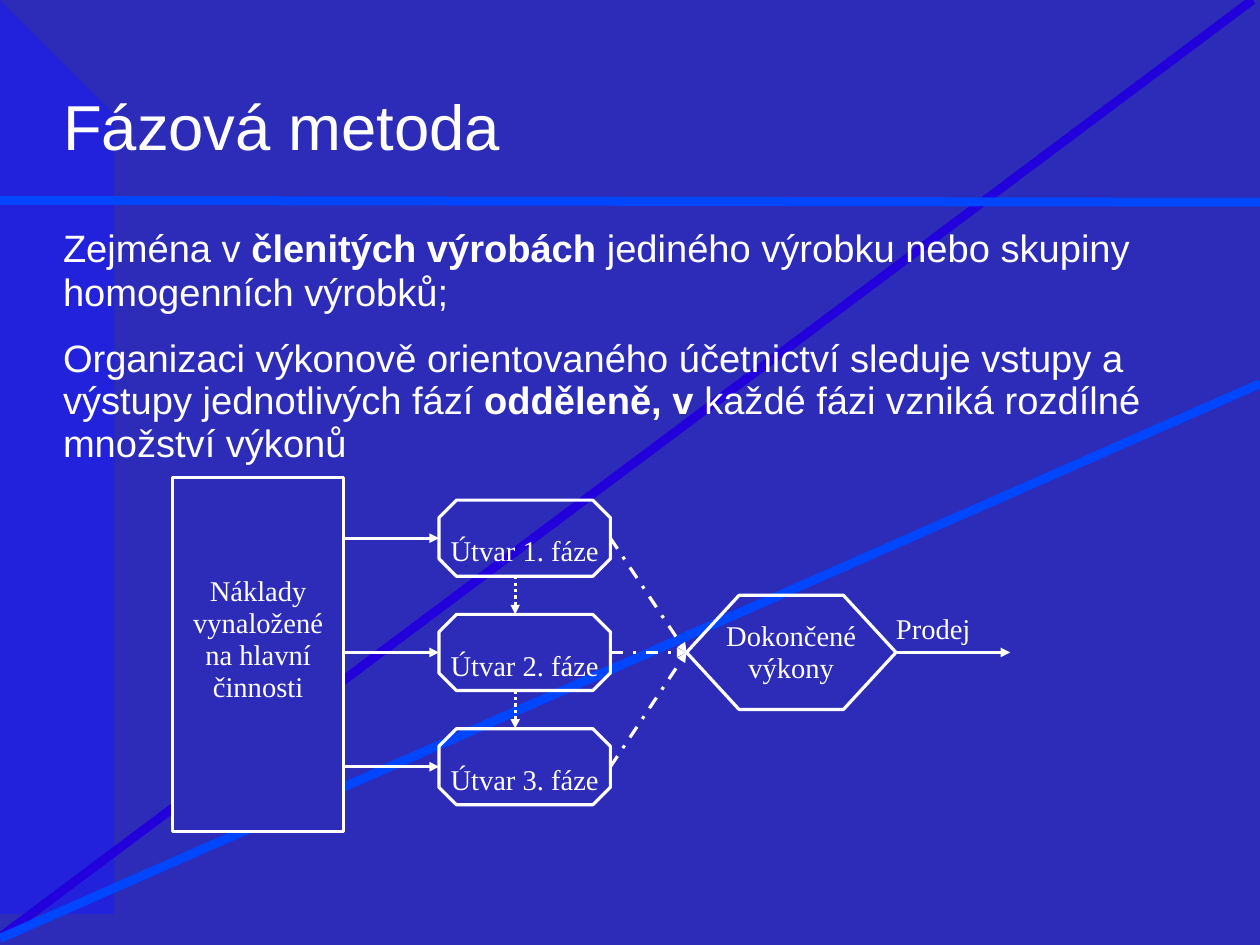
import math
from dataclasses import dataclass
from typing import Optional

import lxml.etree
import pptx
import pptx.dml.color
import pptx.enum.dml
import pptx.enum.shapes
import pptx.enum.text
import pptx.oxml.ns
import pptx.util

SHAPE = pptx.enum.shapes.MSO_SHAPE
DASH = pptx.enum.dml.MSO_LINE
ANCHOR = pptx.enum.text.MSO_ANCHOR
ALIGN = pptx.enum.text.PP_ALIGN
qn = pptx.oxml.ns.qn

SLIDE_W, SLIDE_H = 11.03, 8.27
CELL = 1 / 6
FLOW_LEFT, FLOW_TOP = 1.51, 4.21
WHITE, NAVY, BLUE, VIOLET, SKY = "FFFFFF", "2C2CB8", "2222DC", "2200DC", "0046FF"
SANS, SERIF = "Arial", "Times New Roman"


@dataclass
class Node:
    """A flow chart box; position and size are in grid cells."""
    text: str
    kind: pptx.enum.shapes.MSO_SHAPE
    col: float
    row: float
    cols: float
    rows: float
    corner: Optional[float] = None
    fill: Optional[str] = None
    anchor: pptx.enum.text.MSO_ANCHOR = ANCHOR.MIDDLE
    side_inset: float = 0
    bottom_inset: float = 0


@dataclass
class Arrow:
    """A flow chart arrow; both ends are in grid cells."""
    col1: float
    row1: float
    col2: float
    row2: float
    dash: Optional[pptx.enum.dml.MSO_LINE] = None


@dataclass
class Stripe:
    """A background line; both ends are shares of the slide's size."""
    x1: float
    y1: float
    x2: float
    y2: float
    color: str


PHASE_ROWS = (1, 7, 13)
NODES = [
    Node("Náklady vynaložené na hlavní činnosti", SHAPE.RECTANGLE, 0, -0.2, 9, 18.6,
         fill=NAVY, side_inset=0.16, bottom_inset=0.26),
    *(Node(f"Útvar {n}. fáze", SHAPE.OCTAGON, 14, row, 9, 4, corner=0.23,
           anchor=ANCHOR.BOTTOM) for n, row in enumerate(PHASE_ROWS, 1)),
    Node("Dokončené výkony", SHAPE.HEXAGON, 27, 6, 11, 6, corner=0.46),
]
ARROWS = [
    *(Arrow(9, row + 2, 14, row + 2) for row in PHASE_ROWS),
    *(Arrow(18, row + 4, 18, row + 6, DASH.ROUND_DOT) for row in PHASE_ROWS[:-1]),
    *(Arrow(23, row + 2, 27, 9, DASH.DASH_DOT) for row in PHASE_ROWS),
    Arrow(38, 9, 44, 9),
]
STRIPES = [
    Stripe(0.994, 0, 0, 0.992, VIOLET),
    Stripe(1, 0.214, 0, 0.212, SKY),
    Stripe(1, 0.406, 0, 0.993, SKY),
]
BODY = [
    (27.8, 0, [("Zejména v ", False), ("členitých výrobách ", True),
               ("jediného výrobku nebo skupiny", False)]),
    (27.8, 0, [("homogenních výrobků;", False)]),
    (26.8, 14.6, [("Organizaci výkonově orientovaného účetnictví sleduje vstupy a "
                   "výstupy jednotlivých fází ", False), ("odděleně, v ", True),
                  ("každé fázi vzniká rozdílné množství výkonů", False)]),
]


def rgb(color: str) -> pptx.dml.color.RGBColor:
    return pptx.dml.color.RGBColor.from_string(color)


def col_x(col: float) -> int:
    return pptx.util.Inches(FLOW_LEFT + col * CELL)


def row_y(row: float) -> int:
    return pptx.util.Inches(FLOW_TOP + row * CELL)


def span(cells: float) -> int:
    return pptx.util.Inches(cells * CELL)


def share_x(share: float) -> int:
    return pptx.util.Inches(SLIDE_W * share)


def share_y(share: float) -> int:
    return pptx.util.Inches(SLIDE_H * share)


def set_font(p, name: str, size: float) -> None:
    p.font.name, p.font.size = name, pptx.util.Pt(size)
    p.font.color.rgb = rgb(WHITE)


def set_frame(tf, anchor, side: float = 0, top: float = 0, bottom: float = 0) -> None:
    tf.word_wrap = True
    tf.auto_size = pptx.enum.text.MSO_AUTO_SIZE.NONE
    tf.vertical_anchor = anchor
    tf.margin_left = tf.margin_right = pptx.util.Inches(side)
    tf.margin_top, tf.margin_bottom = pptx.util.Inches(top), pptx.util.Inches(bottom)


def draw_line(slide, x1: int, y1: int, x2: int, y2: int, color: str, width: float):
    line = slide.shapes.add_connector(pptx.enum.shapes.MSO_CONNECTOR.STRAIGHT, x1, y1, x2, y2)
    line.line.color.rgb = rgb(color)
    line.line.width = pptx.util.Pt(width)
    lxml.etree.SubElement(line._element.spPr, qn("a:effectLst"))
    return line


def draw_backdrop(slide) -> None:
    slide.background.fill.solid()
    slide.background.fill.fore_color.rgb = rgb(NAVY)
    points = [(max(0, 0.11 + 0.86 * math.cos(math.radians(a))),
               4.14 + 4.12 * math.sin(math.radians(a))) for a in range(-98, 99, 4)]
    builder = slide.shapes.build_freeform(*points[0], scale=pptx.util.Inches(1))
    builder.add_line_segments(points[1:])
    sp = builder.convert_to_shape()
    sp.shadow.inherit = False
    sp.fill.solid()
    sp.fill.fore_color.rgb = rgb(BLUE)
    sp.line.fill.background()
    for s in STRIPES:
        draw_line(slide, share_x(s.x1), share_y(s.y1), share_x(s.x2), share_y(s.y2),
                  s.color, 5.67)


def place(slide, sp, top: float, height: float) -> None:
    """Bring a placeholder above the backdrop and set it on the text column."""
    slide.shapes._spTree.append(sp._element)
    sp.left, sp.width = share_x(0.05), share_x(0.902)
    sp.top, sp.height = share_y(top), share_y(height)


def write_title(slide) -> None:
    sp = slide.shapes.title
    place(slide, sp, 0.052, 0.122)
    set_frame(sp.text_frame, ANCHOR.TOP, top=0.33)
    p = sp.text_frame.paragraphs[0]
    p.text, p.alignment = "Fázová metoda", ALIGN.LEFT
    set_font(p, SANS, 40)


def write_body(slide) -> None:
    sp = slide.placeholders[1]
    place(slide, sp, 0.239, 0.258)
    tf = sp.text_frame
    set_frame(tf, ANCHOR.TOP)
    for i, (spacing, before, runs) in enumerate(BODY):
        p = tf.add_paragraph() if i else tf.paragraphs[0]
        p.line_spacing = pptx.util.Pt(spacing)
        p.space_before = pptx.util.Pt(before)
        set_font(p, SANS, 24)
        pPr = p._p.get_or_add_pPr()
        pPr.set("marL", "0")
        pPr.set("indent", "0")
        pPr.insert_element_before(pPr.makeelement(qn("a:buNone")), "a:tabLst", "a:defRPr")
        for text, bold in runs:
            r = p.add_run()
            r.text, r.font.bold = text, bold


def draw_node(slide, node: Node) -> None:
    sp = slide.shapes.add_shape(node.kind, col_x(node.col), row_y(node.row),
                                span(node.cols), span(node.rows))
    sp.shadow.inherit = False
    if node.corner is not None:
        sp.adjustments[0] = node.corner
    if node.fill:
        sp.fill.solid()
        sp.fill.fore_color.rgb = rgb(node.fill)
    else:
        sp.fill.background()
    sp.line.color.rgb = rgb(WHITE)
    sp.line.width = pptx.util.Pt(2)
    set_frame(sp.text_frame, node.anchor, node.side_inset, bottom=node.bottom_inset)
    p = sp.text_frame.paragraphs[0]
    p.text, p.alignment = node.text, ALIGN.CENTER
    p.line_spacing = pptx.util.Pt(20.2)
    set_font(p, SERIF, 18)


def draw_arrow(slide, a: Arrow) -> None:
    line = draw_line(slide, col_x(a.col1), row_y(a.row1), col_x(a.col2), row_y(a.row2), WHITE, 2)
    if a.dash is not None:
        line.line.dash_style = a.dash
    lxml.etree.SubElement(line.line._get_or_add_ln(), qn("a:tailEnd"), type="triangle")


def write_sale_label(slide) -> None:
    tf = slide.shapes.add_textbox(col_x(38), row_y(6.84), span(4.2), span(1.8)).text_frame
    set_frame(tf, ANCHOR.TOP)
    tf.text = "Prodej"
    set_font(tf.paragraphs[0], SERIF, 18)


def main() -> None:
    prs = pptx.Presentation()
    prs.slide_width, prs.slide_height = share_x(1), share_y(1)
    slide = prs.slides.add_slide(prs.slide_layouts[1])
    draw_backdrop(slide)
    write_title(slide)
    write_body(slide)
    for node in NODES:
        draw_node(slide, node)
    for arrow in ARROWS:
        draw_arrow(slide, arrow)
    write_sale_label(slide)
    prs.save("out.pptx")


if __name__ == "__main__":
    main()
